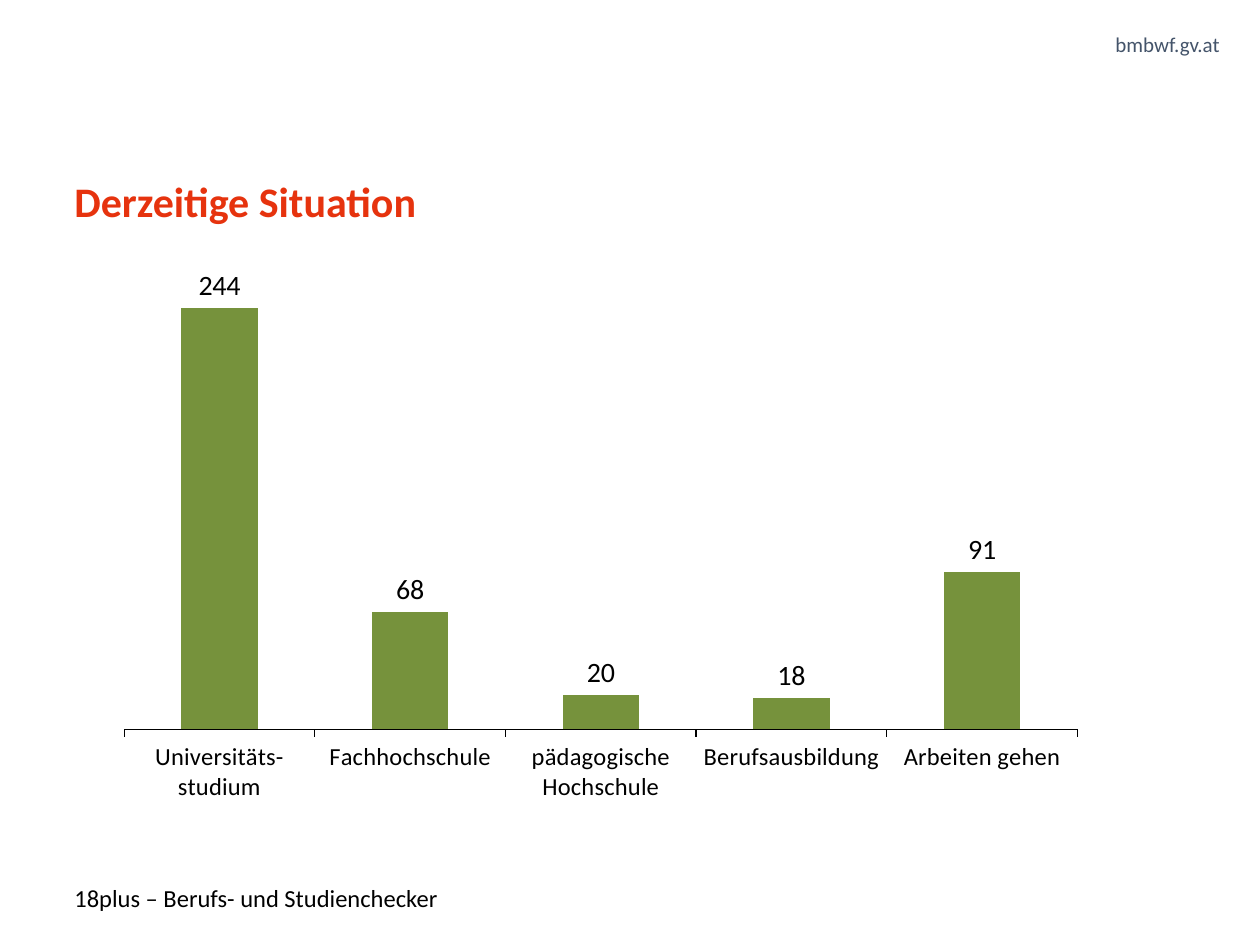
from lxml.etree import SubElement
from pptx import Presentation
from pptx.chart.data import CategoryChartData
from pptx.dml.color import RGBColor
from pptx.enum.chart import XL_CHART_TYPE, XL_LABEL_POSITION, XL_TICK_LABEL_POSITION, XL_TICK_MARK
from pptx.enum.text import MSO_ANCHOR, PP_ALIGN
from pptx.oxml.ns import qn
from pptx.util import Inches, Pt

WIDTH, HEIGHT = 10, 7.5
MARGIN = 0.59
FONT = "Calibri"
BLACK, WHITE, SLATE, RED, GREEN = "000000", "FFFFFF", "44546A", "E6330E", "76923C"
SITUATION = {
    "Universitäts- studium": 244,
    "Fachhochschule": 68,
    "pädagogische Hochschule": 20,
    "Berufsausbildung": 18,
    "Arbeiten gehen": 91,
}


def color(hex_value):
    return RGBColor.from_string(hex_value)


def style_font(font, size, fill=BLACK, bold=False):
    font.name, font.size, font.bold = FONT, Pt(size), bold
    font.color.rgb = color(fill)


def add_text(s, box, text, size, fill=BLACK, bold=False, align=PP_ALIGN.LEFT,
             anchor=MSO_ANCHOR.TOP, line_spacing=1.0, wrap=True):
    tf = s.shapes.add_textbox(*map(Inches, box)).text_frame
    tf.margin_left = tf.margin_right = tf.margin_top = tf.margin_bottom = 0
    tf.word_wrap, tf.vertical_anchor = wrap, anchor
    p = tf.paragraphs[0]
    p.alignment, p.line_spacing = align, line_spacing
    r = p.add_run()
    r.text = text
    style_font(r.font, size, fill, bold)


def set_plot_layout(chart, **shares):
    """Fix the inner plot area as shares of the chart's size."""
    plot_area = chart._chartSpace.chart.plotArea
    for old in plot_area.findall(qn("c:layout")):
        plot_area.remove(old)
    layout = plot_area.makeelement(qn("c:layout"))
    plot_area.insert(0, layout)
    manual = SubElement(layout, qn("c:manualLayout"))
    settings = {"layoutTarget": "inner", "xMode": "edge", "yMode": "edge", **shares}
    for tag, value in settings.items():
        SubElement(manual, qn(f"c:{tag}")).set("val", str(value))


def style_axes(chart):
    cat = chart.category_axis
    cat.major_tick_mark = XL_TICK_MARK.OUTSIDE
    cat.format.line.color.rgb = color(BLACK)
    cat.format.line.width = Pt(0.75)
    style_font(cat.tick_labels.font, 14)

    val = chart.value_axis
    val.minimum_scale, val.maximum_scale, val.major_unit = 0, 280, 10
    val.major_tick_mark = XL_TICK_MARK.NONE
    val.tick_label_position = XL_TICK_LABEL_POSITION.NONE
    val.format.line.fill.background()
    grid = val.major_gridlines.format.line
    grid.color.rgb, grid.width = color(WHITE), Pt(0.75)


def add_situation_chart(s, box):
    data = CategoryChartData(number_format="###0")
    data.categories = SITUATION.keys()
    data.add_series("Series 1", SITUATION.values())
    chart = s.shapes.add_chart(XL_CHART_TYPE.COLUMN_CLUSTERED, *map(Inches, box), data).chart
    chart.has_legend = chart.has_title = False
    chart.font.name, chart.font.size = "Arial", Pt(8)
    set_plot_layout(chart, x=0.02, y=0, w=0.97, h=0.84)
    style_axes(chart)

    plot = chart.plots[0]
    plot.gap_width, plot.vary_by_categories = 150, False
    fill = plot.series[0].format.fill
    fill.solid()
    fill.fore_color.rgb = color(GREEN)
    plot.has_data_labels = True
    labels = plot.data_labels
    labels.show_value, labels.position = True, XL_LABEL_POSITION.OUTSIDE_END
    labels.number_format, labels.number_format_is_linked = "###0", False
    style_font(labels.font, 16)


def build_slide(prs):
    s = prs.slides.add_slide(prs.slide_layouts[6])
    add_text(s, (7.27, 0.25, 2.41, 0.2), "bmbwf.gv.at", 12, SLATE, align=PP_ALIGN.RIGHT)
    add_text(s, (MARGIN, 1.44, 8.73, 0.91), "Derzeitige Situation", 24, RED,
             bold=True, line_spacing=0.9)
    add_text(s, (MARGIN, 6.98, 7.52, 0.29), "18plus – Berufs- und Studienchecker", 14,
             anchor=MSO_ANCHOR.MIDDLE)
    add_situation_chart(s, (0.83, 1.95, 7.8, 4.57))


def main():
    prs = Presentation()
    prs.slide_width, prs.slide_height = Inches(WIDTH), Inches(HEIGHT)
    build_slide(prs)
    prs.save("out.pptx")


if __name__ == "__main__":
    main()
